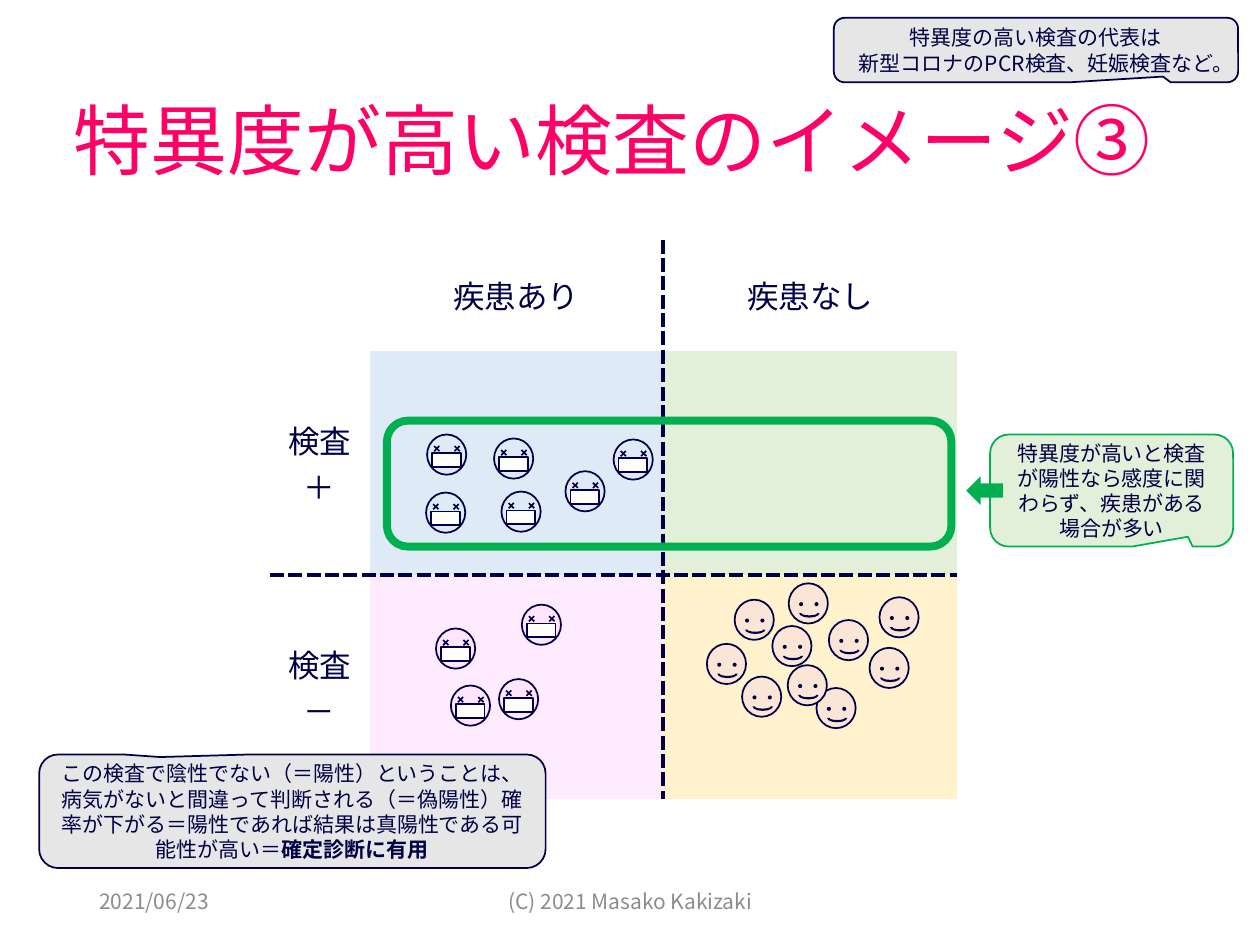
from lxml.etree import SubElement
from pptx import Presentation
from pptx.dml.color import RGBColor
from pptx.enum.lang import MSO_LANGUAGE_ID as Language
from pptx.enum.shapes import MSO_SHAPE as Shape
from pptx.enum.text import MSO_ANCHOR as Anchor, PP_ALIGN as Align
from pptx.oxml.ns import qn
from pptx.util import Cm, Pt

FONT = "Noto Sans CJK JP"
PLAIN_TABLE_STYLE = "{2D5ABB26-0587-4C30-8999-92F81FD0307C}"
COLORS = {
    "ink": "000046", "title": "FF0066", "footer": "8C8C8C", "green": "00B050",
    "white": "FFFFFF", "gray": "E7E6E6", "true_positive": "DEEBF7",
    "false_positive": "E2F0D9", "false_negative": "FFEBFF",
    "true_negative": "FFF2CC", "missed_face": "FFE5FF", "healthy_face": "FBE5D6",
}
TABLE_BOX = (5.44, 4.83, 13.86, 11.28)
COLUMNS = (2.01, 5.92, 5.93)
ROWS = (2.24, 4.52, 4.52)
LABELS = {(0, 1): "疾患あり", (0, 2): "疾患なし", (1, 0): "検査\n＋", (2, 0): "検査\n－"}
QUADRANTS = {(1, 1): "true_positive", (1, 2): "false_positive",
             (2, 1): "false_negative", (2, 2): "true_negative"}
DETECTED = [(2.51, 1.77), (1.16, 1.69), (3.95, 2.43), (1.14, 2.86),
            (2.66, 2.84), (4.92, 1.79)]
MISSED = [(1.34, 1.08), (3.07, 0.6), (2.61, 2.1), (1.64, 2.23)]
HEALTHY = [(1.59, 2.05), (2.2, 1.03), (0.88, 1.39), (1.44, 0.5), (3.09, 2.28),
           (4.16, 1.47), (3.34, 0.91), (4.36, 0.45), (2.53, 0.17), (2.51, 1.82)]


def rgb(color):
    """Return the named palette colour."""
    return RGBColor.from_string(COLORS[color])


def style_text(frame, size, color="ink", align=Align.CENTER):
    """Format every paragraph and run of a text frame."""
    for paragraph in frame.paragraphs:
        paragraph.alignment = align
        for run in paragraph.runs:
            run.font.size = Pt(size)
            run.font.name = FONT
            run.font.language_id = Language.JAPANESE
            run.font.color.rgb = rgb(color)
            SubElement(run.font._element, qn("a:ea"), typeface=FONT)


def draw(shapes, kind, box, fill=None, line=None, width=1, adjustments=(), rotation=0):
    """Draw a preset shape in a box given in centimetres."""
    part = shapes.add_shape(kind, *map(Cm, box))
    part.shadow.inherit = False
    part.rotation = rotation
    for index, value in enumerate(adjustments):
        part.adjustments[index] = value
    if fill:
        part.fill.solid()
        part.fill.fore_color.rgb = rgb(fill)
    else:
        part.fill.background()
    if line:
        part.line.color.rgb = rgb(line)
        part.line.width = Pt(width)
    else:
        part.line.fill.background()
    return part


def add_label(slide, box, text, size, color, align=Align.LEFT):
    """Place a vertically centred line of text."""
    frame = slide.shapes.add_textbox(*map(Cm, box)).text_frame
    frame.word_wrap = True
    frame.vertical_anchor = Anchor.MIDDLE
    frame.text = text
    style_text(frame, size, color, align)
    return frame


def add_callout(slide, box, text, fill, line, tip, emphasis=""):
    """Place a rounded callout, with an optional bold ending."""
    callout = draw(slide.shapes, Shape.ROUNDED_RECTANGULAR_CALLOUT, box, fill, line,
                   adjustments=(*tip, 0.167))
    frame = callout.text_frame
    frame.word_wrap = True
    frame.vertical_anchor = Anchor.MIDDLE
    frame.text = text
    if emphasis:
        ending = frame.paragraphs[-1].add_run()
        ending.text = emphasis
        ending.font.bold = True
    style_text(frame, 12)


def add_dashed_border(cell, side):
    """Give one side of a cell a thick dashed border."""
    border = SubElement(cell._tc.get_or_add_tcPr(), qn(f"a:ln{side}"), w=str(Pt(3)))
    ink = SubElement(border, qn("a:solidFill"))
    SubElement(ink, qn("a:srgbClr"), val=COLORS["ink"])
    SubElement(border, qn("a:prstDash"), val="dash")


def add_matrix(slide, box):
    """Build the table of disease against test result."""
    matrix = slide.shapes.add_table(len(ROWS), len(COLUMNS), *map(Cm, box)).table
    matrix.first_row = matrix.horz_banding = False
    matrix._tbl.tblPr.find(qn("a:tableStyleId")).text = PLAIN_TABLE_STYLE
    for column, width in zip(matrix.columns, COLUMNS):
        column.width = Cm(width)
    for r, height in enumerate(ROWS):
        matrix.rows[r].height = Cm(height)
        for c in range(len(COLUMNS)):
            cell = matrix.cell(r, c)
            for side in ({1: "R", 2: "L"}.get(c), {1: "B", 2: "T"}.get(r)):
                if side:
                    add_dashed_border(cell, side)
            cell.vertical_anchor = Anchor.MIDDLE
            cell.text = LABELS.get((r, c), "")
            style_text(cell.text_frame, 18)
            if (r, c) in QUADRANTS:
                cell.fill.solid()
                cell.fill.fore_color.rgb = rgb(QUADRANTS[r, c])
            else:
                cell.fill.background()


def quadrant_origin(row, column):
    """Return the top left corner of a table cell."""
    return TABLE_BOX[0] + sum(COLUMNS[:column]), TABLE_BOX[1] + sum(ROWS[:row])


def add_sick_face(shapes, x, y, skin):
    """Draw a masked face with crossed eyes."""
    draw(shapes, Shape.OVAL, (x, y, 0.79, 0.81), skin, "ink")
    draw(shapes, Shape.RECTANGLE, (x + 0.1, y + 0.38, 0.58, 0.28), "white", "ink")
    for eye in (0.12, 0.53):
        draw(shapes, Shape.CROSS, (x + eye, y + 0.21, 0.15, 0.15), "ink",
             adjustments=(0.389,), rotation=43.8)


def add_healthy_face(shapes, x, y, skin):
    """Draw a smiling face."""
    draw(shapes, Shape.OVAL, (x, y, 0.79, 0.81), skin, "ink")
    for eye in (0.21, 0.52):
        draw(shapes, Shape.OVAL, (x + eye, y + 0.38, 0.08, 0.08), "ink")
    draw(shapes, Shape.BLOCK_ARC, (x + 0.21, y + 0.51, 0.41, 0.18), "ink", rotation=180)


def add_crowd(slide, origin, add_face, skin, places):
    """Scatter grouped faces over a quadrant."""
    left, top = origin
    for dx, dy in places:
        add_face(slide.shapes.add_group_shape().shapes, left + dx, top + dy, skin)


def main():
    """Build and save the slide."""
    deck = Presentation()
    deck.slide_width, deck.slide_height = Cm(25.4), Cm(19.05)
    slide = deck.slides.add_slide(deck.slide_layouts[6])
    add_callout(slide, (19.96, 8.76, 4.9, 2.26),
                "特異度が高いと検査が陽性なら感度に関わらず、疾患がある場合が多い",
                "false_positive", "green", (0.314, 0.412))
    add_matrix(slide, TABLE_BOX)
    title = add_label(slide, (1.24, 1.07, 22.86, 3.68),
                      "特異度が高い検査のイメージ③", 44, "title")
    title.paragraphs[0].line_spacing = 0.9
    add_label(slide, (1.75, 17.65, 5.72, 1.02), "2021/06/23", 12, "footer")
    add_label(slide, (8.41, 17.65, 8.59, 1.02), "(C) 2021 Masako Kakizaki", 12,
              "footer", Align.CENTER)
    add_crowd(slide, quadrant_origin(1, 1), add_sick_face, "true_positive", DETECTED)
    add_crowd(slide, quadrant_origin(2, 1), add_sick_face, "missed_face", MISSED)
    add_crowd(slide, quadrant_origin(2, 2), add_healthy_face, "healthy_face", HEALTHY)
    add_callout(slide, (16.81, 0.36, 8.15, 1.3),
                "特異度の高い検査の代表は\n新型コロナのPCR検査、妊娠検査など。",
                "gray", "ink", (0.314, 0.412))
    draw(slide.shapes, Shape.ROUNDED_RECTANGLE, (7.8, 8.48, 11.38, 2.54),
         line="green", width=4.5)
    add_callout(slide, (0.79, 15.21, 10.21, 2.29),
                "この検査で陰性でない（＝陽性）ということは、病気がないと間違って判断される"
                "（＝偽陽性）確率が下がる＝陽性であれば結果は真陽性である可能性が高い＝",
                "gray", "ink", (-0.261, -0.477), "確定診断に有用")
    draw(slide.shapes, Shape.LEFT_ARROW, (19.48, 9.6, 0.74, 0.58), "green")
    deck.save("out.pptx")


if __name__ == "__main__":
    main()
